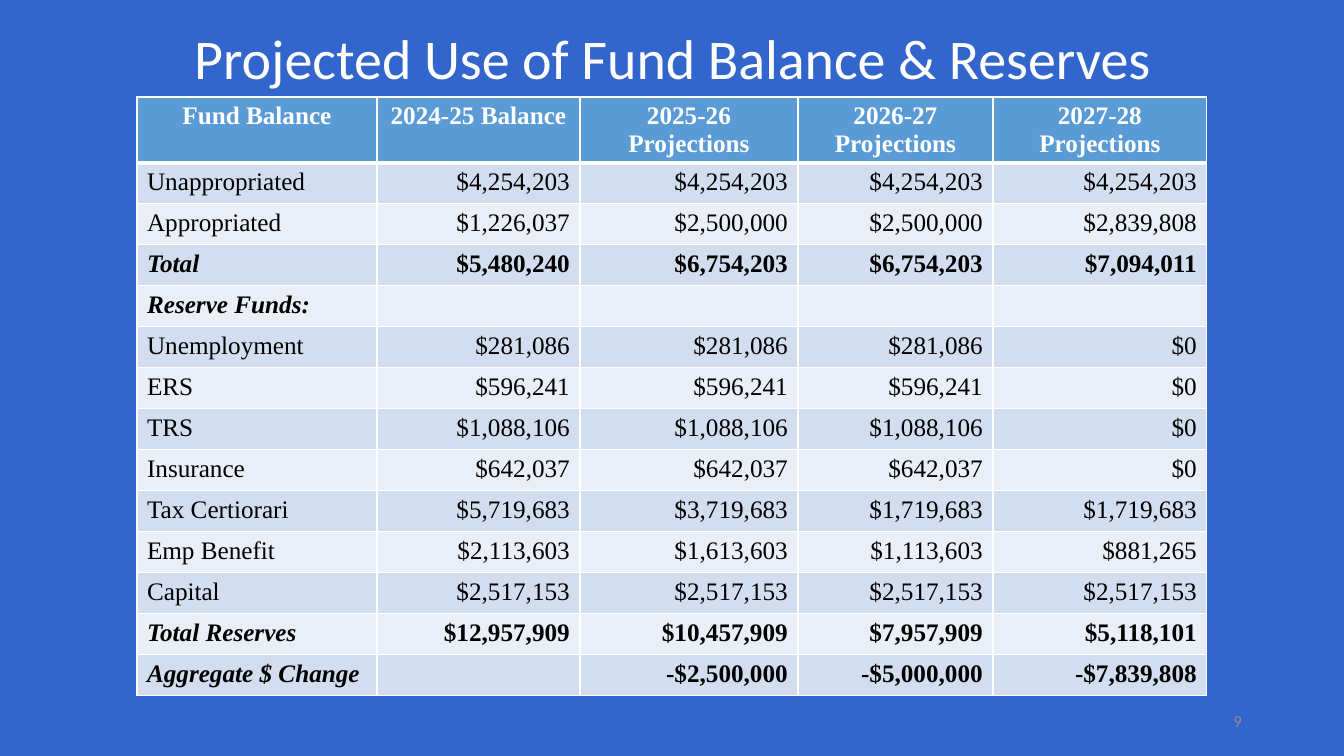
from lxml import etree
from pptx import Presentation
from pptx import util as u
from pptx.dml.color import RGBColor
from pptx.enum import text
from pptx.oxml import ns

WHITE = RGBColor(0xFF, 0xFF, 0xFF)
BLACK = RGBColor(0, 0, 0)
GREY = RGBColor(0x8C, 0x8C, 0x8C)
ROYAL = RGBColor(0x33, 0x66, 0xCC)
HEAD = RGBColor(0x5B, 0x9B, 0xD5)
BANDS = RGBColor(0xD2, 0xDE, 0xEF), RGBColor(0xEA, 0xEF, 0xF7)

SANS, SERIF = "Calibri", "Times New Roman"
LEFT, MID, RIGHT = (text.PP_ALIGN.LEFT, text.PP_ALIGN.CENTER,
                    text.PP_ALIGN.RIGHT)

WIDTHS = 240, 203, 218, 195, 214
HEADER = ("Fund Balance", "2024-25 Balance", "2025-26 Projections",
          "2026-27 Projections", "2027-28 Projections")
FUNDS = [
    ("Unappropriated", "$4,254,203", "$4,254,203", "$4,254,203", "$4,254,203"),
    ("Appropriated", "$1,226,037", "$2,500,000", "$2,500,000", "$2,839,808"),
    ("Total", "$5,480,240", "$6,754,203", "$6,754,203", "$7,094,011"),
    ("Reserve Funds:", "", "", "", ""),
    ("Unemployment", "$281,086", "$281,086", "$281,086", "$0"),
    ("ERS", "$596,241", "$596,241", "$596,241", "$0"),
    ("TRS", "$1,088,106", "$1,088,106", "$1,088,106", "$0"),
    ("Insurance", "$642,037", "$642,037", "$642,037", "$0"),
    ("Tax Certiorari", "$5,719,683", "$3,719,683", "$1,719,683", "$1,719,683"),
    ("Emp Benefit", "$2,113,603", "$1,613,603", "$1,113,603", "$881,265"),
    ("Capital", "$2,517,153", "$2,517,153", "$2,517,153", "$2,517,153"),
    ("Total Reserves", "$12,957,909", "$10,457,909", "$7,957,909",
     "$5,118,101"),
    ("Aggregate $ Change", "", "-$2,500,000", "-$5,000,000", "-$7,839,808"),
]
STRONG = {"Total", "Reserve Funds:", "Total Reserves", "Aggregate $ Change"}


def px(n):
    return u.Emu(round(n * 914400 / 100.8))


class Deck:
    def __init__(self, wide, high, back):
        self.prs = Presentation()
        self.prs.slide_width, self.prs.slide_height = px(wide), px(high)
        self.slide = self.prs.slides.add_slide(self.prs.slide_layouts[5])
        fill = self.slide.background.fill
        fill.solid()
        fill.fore_color.rgb = back

    def letter(self, frame, words, face, size, color, align,
               bold=False, slant=False):
        para = frame.paragraphs[0]
        para.text, para.alignment = words, align
        font = para.font
        font.name, font.size, font.color.rgb = face, u.Pt(size), color
        font.bold, font.italic = bold, slant
        return para

    def place(self, shape, box, anchor):
        shape.left, shape.top, shape.width, shape.height = map(px, box)
        frame = shape.text_frame
        frame.word_wrap = True
        frame.auto_size = text.MSO_AUTO_SIZE.NONE
        frame.vertical_anchor = anchor
        return frame

    def title(self, box, words):
        frame = self.place(self.slide.shapes.title, box,
                           text.MSO_ANCHOR.BOTTOM)
        para = self.letter(frame, words, SANS, 40, WHITE, MID)
        para.line_spacing = 0.9

    def label(self, box, words):
        shape = self.slide.shapes.add_textbox(*map(px, box))
        frame = self.place(shape, box, text.MSO_ANCHOR.MIDDLE)
        self.letter(frame, words, SANS, 12, GREY, RIGHT)

    def edge(self, cell, top, bottom):
        props = cell._tc.get_or_add_tcPr()
        sides = ("L", 1), ("R", 1), ("T", top), ("B", bottom)
        for i, (side, width) in enumerate(sides):
            line = etree.Element(ns.qn("a:ln" + side), w=str(u.Pt(width)))
            fill = etree.SubElement(line, ns.qn("a:solidFill"))
            etree.SubElement(fill, ns.qn("a:srgbClr"), val=str(WHITE))
            props.insert(i, line)

    def table(self, left, top, widths, first, step, rows):
        high = first + step * (len(rows) - 1)
        grid = self.slide.shapes.add_table(
            len(rows), len(widths), px(left), px(top),
            px(sum(widths)), px(high)).table
        for col, width in zip(grid.columns, widths):
            col.width = px(width)
        for r, row in enumerate(rows):
            grid.rows[r].height = px(step if r else first)
            strong = r == 0 or row[0] in STRONG
            for c, words in enumerate(row):
                cell = grid.cell(r, c)
                cell.fill.solid()
                cell.fill.fore_color.rgb = BANDS[(r - 1) % 2] if r else HEAD
                align = MID if r == 0 else RIGHT if c else LEFT
                self.letter(cell.text_frame, words, SERIF, 18,
                            BLACK if r else WHITE, align, strong,
                            strong and r > 0 and c == 0)
                self.edge(cell, 3 if r == 1 else 1, 1 if r else 3)


def main():
    deck = Deck(1344, 756, ROYAL)
    # Title
    deck.title((126, 22, 1093, 75), "Projected Use of Fund Balance & Reserves")
    # Page number
    deck.label((950, 701, 302, 40), "9")
    # Balances and reserves
    deck.table(137, 97, WIDTHS, 65, 41, [HEADER] + FUNDS)
    deck.prs.save("out.pptx")


if __name__ == "__main__":
    main()
